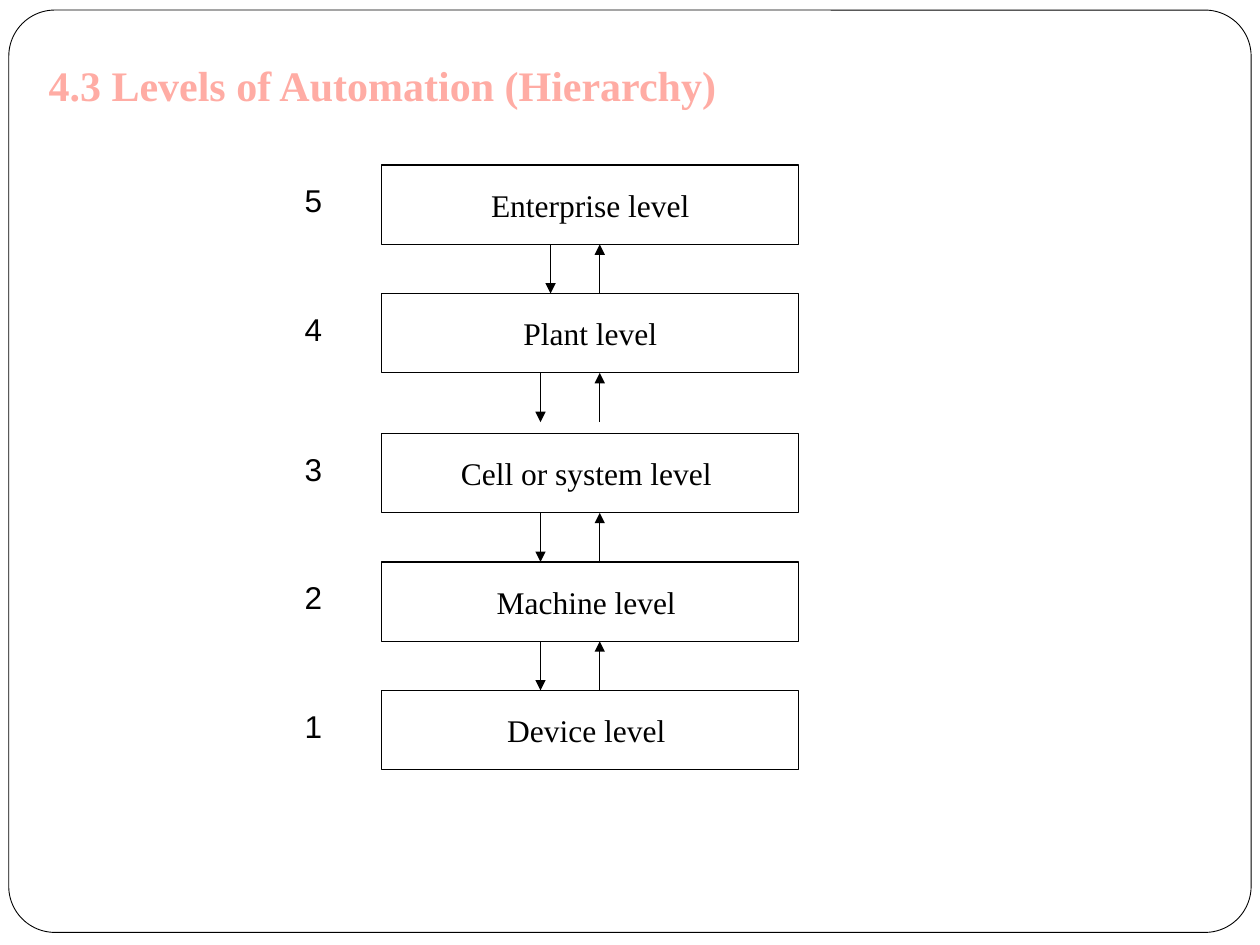
from lxml import etree
from pptx import Presentation
from pptx import util as u
from pptx.dml.color import RGBColor
from pptx.enum import shapes, text
from pptx.oxml import ns

COLORS = {"ink": "000000", "paper": "FFFFFF", "title": "FFACA4"}


def write(shape, words, font="Times New Roman", size=18, color="ink", bold=False,
          align=text.PP_ALIGN.CENTER, anchor=text.MSO_ANCHOR.MIDDLE, wrap=False):
    frame = shape.text_frame
    frame.word_wrap = wrap
    frame.auto_size = text.MSO_AUTO_SIZE.NONE
    frame.vertical_anchor = anchor
    paragraph = frame.paragraphs[0]
    paragraph.alignment = align
    run = paragraph.add_run()
    run.text = words
    run.font.name = font
    run.font.size = u.Pt(size)
    run.font.bold = bold
    run.font.color.rgb = RGBColor.from_string(COLORS[color])


def add_box(slide, kind, left, top, width, height, line_width):
    shape = slide.shapes.add_shape(kind, u.Inches(left), u.Inches(top),
                                   u.Inches(width), u.Inches(height))
    shape.shadow.inherit = False
    shape.fill.solid()
    shape.fill.fore_color.rgb = RGBColor.from_string(COLORS["paper"])
    shape.line.color.rgb = RGBColor.from_string(COLORS["ink"])
    shape.line.width = u.Pt(line_width)
    return shape


presentation = Presentation()
presentation.slide_width = u.Inches(10)
presentation.slide_height = u.Inches(7.5)
slide = presentation.slides.add_slide(presentation.slide_layouts[5])

title = slide.shapes.title
title.left, title.top = u.Inches(0.26), u.Inches(0.42)
title.width, title.height = u.Inches(5.55), u.Inches(0.5)
write(title, "4.3 Levels of Automation (Hierarchy)", size=24, color="title", bold=True)

border = add_box(slide, shapes.MSO_SHAPE.ROUNDED_RECTANGLE, 0.07, 0.08, 9.86, 7.32, 0.5)
border.adjustments[0] = 0.05
title.element.addprevious(border.element)

box_left, box_width, box_height = 3.03, 3.31, 0.63
arrow_length = 0.39
up_x = 4.76
levels = [
    (5, "Enterprise level", 1.31, 4.37),
    (4, "Plant level", 2.33, 4.29),
    (3, "Cell or system level ", 3.44, 4.29),
    (2, "Machine level ", 4.46, 4.29),
    (1, "Device level ", 5.48, None),
]

for number, name, top, down_x in levels:
    box = add_box(slide, shapes.MSO_SHAPE.RECTANGLE, box_left, top, box_width, box_height, 0.75)
    write(box, name)

    label = slide.shapes.add_textbox(u.Inches(2.32), u.Inches(top + 0.08),
                                     u.Inches(0.55), u.Inches(0.4))
    write(label, str(number), font="Arial", align=text.PP_ALIGN.LEFT,
          anchor=text.MSO_ANCHOR.TOP, wrap=True)

    if down_x is None:
        continue
    upper = top + box_height
    lower = upper + arrow_length
    for x, start, end in [(down_x, upper, lower), (up_x, lower, upper)]:
        arrow = slide.shapes.add_connector(shapes.MSO_CONNECTOR.STRAIGHT, u.Inches(x),
                                           u.Inches(start), u.Inches(x), u.Inches(end))
        arrow.line.color.rgb = RGBColor.from_string(COLORS["ink"])
        arrow.line.width = u.Pt(0.75)
        etree.SubElement(arrow.line._get_or_add_ln(), ns.qn("a:tailEnd"), type="triangle")
        etree.SubElement(arrow.element.spPr, ns.qn("a:effectLst"))

presentation.save("out.pptx")
